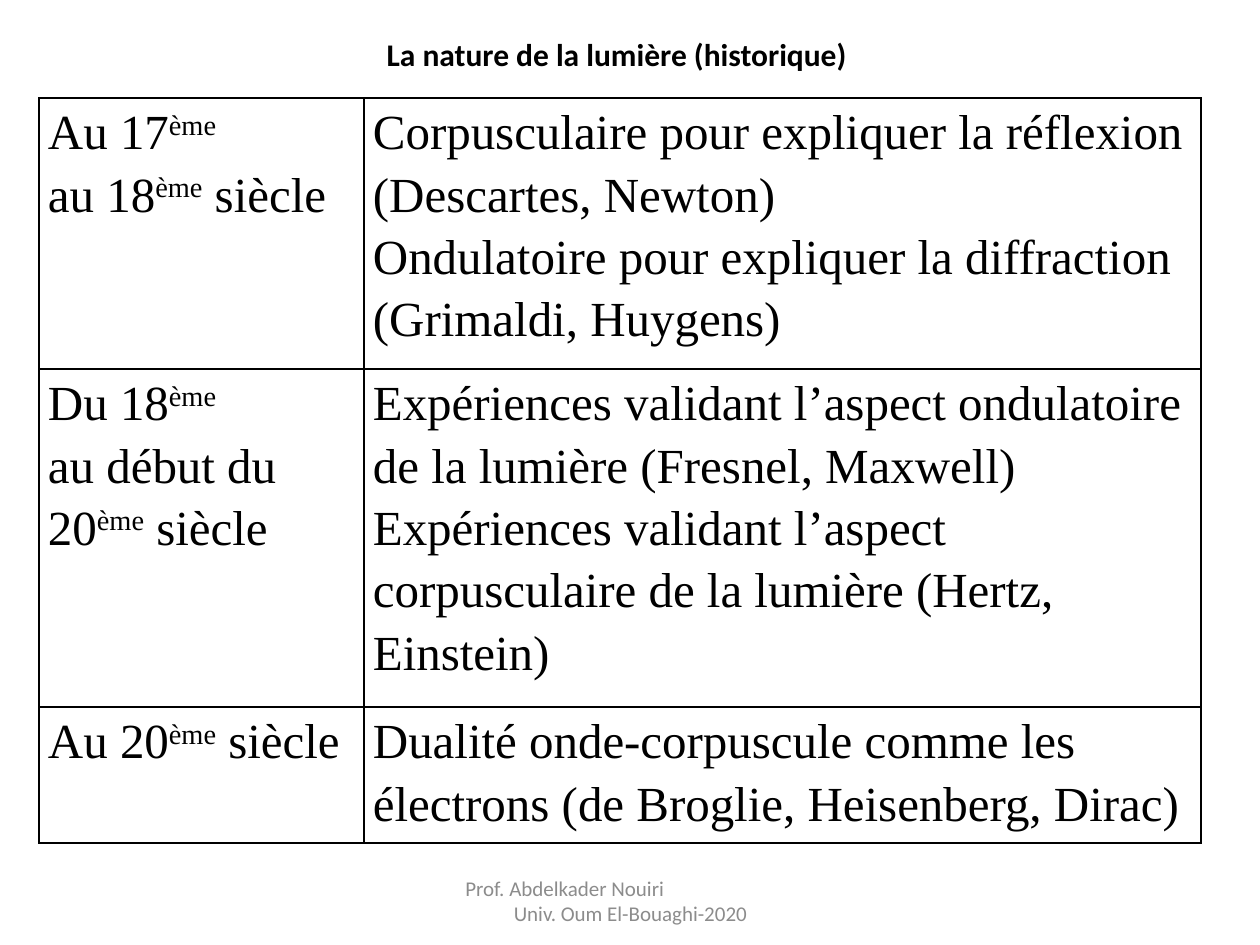
from dataclasses import dataclass

from lxml import etree
from pptx import Presentation
from pptx.dml.color import RGBColor
from pptx.enum.text import MSO_ANCHOR, MSO_AUTO_SIZE, PP_ALIGN
from pptx.oxml.ns import qn
from pptx.util import Emu, Pt

TOP, MIDDLE = MSO_ANCHOR.TOP, MSO_ANCHOR.MIDDLE
LEFT, CENTER = PP_ALIGN.LEFT, PP_ALIGN.CENTER
NO_FIT = MSO_AUTO_SIZE.NONE

EMU_PER_PX = 914400 / 126
COLORS = {"text": "000000", "border": "000000", "footer": "8C8C8C"}
BODY_FONT, UI_FONT = "Times New Roman", "Calibri"
ORDINAL = "ème"
COL_WIDTHS = (325, 837)
CELL_MARGIN = 9


@dataclass(frozen=True)
class Period:
    height: int
    dates: tuple[str, ...]
    theories: tuple[str, ...]


PERIODS = (
    Period(271, ("Au 17ème", "au 18ème siècle"),
           ("Corpusculaire pour expliquer la réflexion (Descartes, Newton)",
            "Ondulatoire pour expliquer la diffraction (Grimaldi, Huygens)")),
    Period(338, ("Du 18ème", "au début du 20ème siècle"),
           ("Expériences validant l’aspect ondulatoire de la lumière (Fresnel, Maxwell)",
            "Expériences validant l’aspect corpusculaire de la lumière (Hertz, Einstein)")),
    Period(136, ("Au 20ème siècle",),
           ("Dualité onde-corpuscule comme les électrons (de Broglie, Heisenberg, Dirac)",)),
)


def px(n: int) -> Emu:
    return Emu(round(n * EMU_PER_PX))


def add_run(p, text: str, font: str, size: int, color: str, bold: bool = False):
    r = p.add_run()
    r.text = text
    r.font.name, r.font.size, r.font.bold = font, Pt(size), bold
    r.font.color.rgb = RGBColor.from_string(COLORS[color])
    return r


def add_body_line(p, text: str) -> None:
    """Write one cell paragraph, raising the ordinal suffix."""
    p.line_spacing = 1.15
    before, suffix, after = text.partition(ORDINAL)
    for part in filter(None, (before, suffix, after)):
        r = add_run(p, part, BODY_FONT, 28, "text")
        if part == ORDINAL:
            r.font._element.set("baseline", "30000")


def add_borders(cell) -> None:
    tc_pr = cell._tc.get_or_add_tcPr()
    for side in ("lnL", "lnR", "lnT", "lnB"):
        ln = etree.SubElement(tc_pr, qn(f"a:{side}"), w=str(Pt(1)))
        fill = etree.SubElement(ln, qn("a:solidFill"))
        etree.SubElement(fill, qn("a:srgbClr"), val=COLORS["border"])


def fill_cell(cell, lines: tuple[str, ...]) -> None:
    add_borders(cell)
    cell.fill.background()
    cell.margin_left = cell.margin_right = px(CELL_MARGIN)
    cell.margin_top = cell.margin_bottom = 0
    cell.vertical_anchor = TOP
    tf = cell.text_frame
    for i, line in enumerate(lines):
        add_body_line(tf.add_paragraph() if i else tf.paragraphs[0], line)


def add_title(s) -> None:
    sp = s.shapes.title
    sp.left, sp.top, sp.width, sp.height = px(374), px(29), px(489), px(50)
    tf = sp.text_frame
    tf.auto_size, tf.word_wrap, tf.vertical_anchor = NO_FIT, False, TOP
    p = tf.paragraphs[0]
    p.alignment = LEFT
    add_run(p, "La nature de la lumière (historique)", UI_FONT, 18, "text", True)


def add_history_table(s) -> None:
    height = sum(period.height for period in PERIODS)
    table = s.shapes.add_table(len(PERIODS), len(COL_WIDTHS), px(39), px(98),
                               px(sum(COL_WIDTHS)), px(height)).table
    table.first_row = table.horz_banding = False
    for column, width in zip(table.columns, COL_WIDTHS):
        column.width = px(width)
    for row, period in zip(table.rows, PERIODS):
        row.height = px(period.height)
        for cell, lines in zip(row.cells, (period.dates, period.theories)):
            fill_cell(cell, lines)


def add_footer(s) -> None:
    tf = s.shapes.add_textbox(px(431), px(876), px(399), px(50)).text_frame
    tf.word_wrap, tf.vertical_anchor = True, MIDDLE
    author = tf.paragraphs[0]
    author.alignment = LEFT
    author._p.get_or_add_pPr().set("marL", str(px(22)))
    add_run(author, "Prof. Abdelkader Nouiri", UI_FONT, 12, "footer")
    university = tf.add_paragraph()
    university.alignment = CENTER
    add_run(university, "Univ. Oum El-Bouaghi-2020", UI_FONT, 12, "footer")


def main() -> None:
    prs = Presentation()
    prs.slide_width, prs.slide_height = px(1260), px(945)
    s = prs.slides.add_slide(prs.slide_layouts[5])
    add_title(s)
    add_history_table(s)
    add_footer(s)
    prs.save("out.pptx")


if __name__ == "__main__":
    main()
